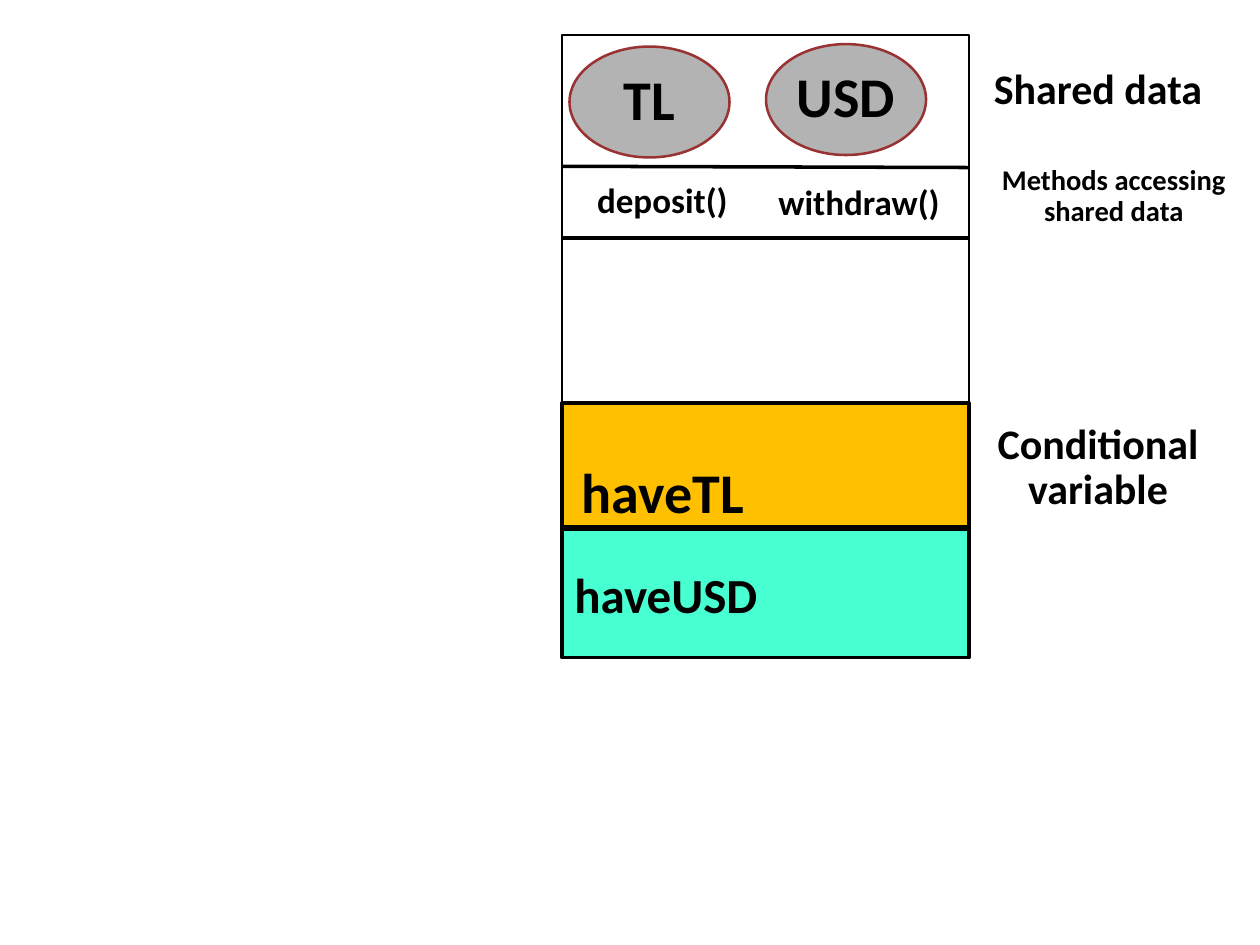
from dataclasses import dataclass

from lxml import etree
from pptx import Presentation
from pptx.dml.color import RGBColor
from pptx.enum.shapes import MSO_CONNECTOR, MSO_SHAPE
from pptx.enum.text import MSO_ANCHOR, MSO_AUTO_SIZE, PP_ALIGN
from pptx.oxml.ns import qn
from pptx.util import Inches, Pt

RECTANGLE, ROUNDED, OVAL = MSO_SHAPE.RECTANGLE, MSO_SHAPE.ROUNDED_RECTANGLE, MSO_SHAPE.OVAL
STRAIGHT = MSO_CONNECTOR.STRAIGHT
TOP, MIDDLE = MSO_ANCHOR.TOP, MSO_ANCHOR.MIDDLE
LEFT, CENTER = PP_ALIGN.LEFT, PP_ALIGN.CENTER
NO_FIT = MSO_AUTO_SIZE.NONE
WIDTH, HEIGHT = Inches(10), Inches(7.5)
BOX_LEFT, BOX_WIDTH, BAND_HEIGHT = 44.6, 32.3, 13.6


@dataclass(frozen=True)
class Theme:
    """Colours, type sizes and line widths of the monitor diagram."""
    font: str = "Calibri"
    ink: str = "000000"
    data_fill: str = "B3B3B3"
    data_line: str = "993333"
    lira_band: str = "FFC000"
    dollar_band: str = "47FFD1"
    huge: float = 32
    large: float = 28
    label: float = 24
    method: float = 20
    note: float = 16.3
    thin: float = 1.45
    thick: float = 2


THEME = Theme()


def across(share):
    """Turn a percentage of the slide width into a length."""
    return round(WIDTH * share / 100)


def down(share):
    """Turn a percentage of the slide height into a length."""
    return round(HEIGHT * share / 100)


def area(left, top, width, height):
    """Turn four percentages into a position and size."""
    return across(left), down(top), across(width), down(height)


def apply_format(target, values):
    """Set every attribute named in a dict of format values."""
    for name, value in values.items():
        setattr(target, name, value)


def write(box, lines, size, align=LEFT, spacing=1.0, anchor=TOP, wrap=False, inset=None):
    """Write bold lines of text into a box."""
    frame = box.text_frame
    apply_format(frame, {"word_wrap": wrap, "auto_size": NO_FIT, "vertical_anchor": anchor})
    if inset is not None:
        sides = ("margin_left", "margin_top", "margin_right", "margin_bottom")
        apply_format(frame, dict.fromkeys(sides, Inches(inset)))
    for index, line in enumerate(lines):
        para = frame.add_paragraph() if index else frame.paragraphs[0]
        apply_format(para, {"alignment": align, "line_spacing": spacing})
        span = para.add_run()
        span.text = line
        apply_format(span.font, {"name": THEME.font, "size": Pt(size), "bold": True})
        span.font.color.rgb = RGBColor.from_string(THEME.ink)


def draw_line(line, color, width):
    """Give a line its colour and width."""
    line.color.rgb = RGBColor.from_string(color)
    line.width = Pt(width)


def add_block(page, kind, place, fill=None, line=THEME.ink, width=THEME.thick):
    """Add a flat shape with an optional fill."""
    shape = page.shapes.add_shape(kind, *area(*place))
    shape.shadow.inherit = False
    if fill:
        shape.fill.solid()
        shape.fill.fore_color.rgb = RGBColor.from_string(fill)
    else:
        shape.fill.background()
    draw_line(shape.line, line, width)
    return shape


def add_label(page, place, lines, size, **options):
    """Add a text box."""
    write(page.shapes.add_textbox(*area(*place)), lines, size, **options)


def add_data(page, left, top, name):
    """Add an oval that stands for a shared variable."""
    oval = add_block(page, OVAL, (left, top, 12.7, 11.73),
                     THEME.data_fill, THEME.data_line, THEME.thin)
    write(oval, [name], THEME.huge, align=CENTER, spacing=0.9, anchor=MIDDLE,
          wrap=True, inset=0.01)


def add_divider(page, start, end):
    """Add a line across the monitor box between two heights."""
    line = page.shapes.add_connector(STRAIGHT, across(BOX_LEFT), down(start),
                                     across(BOX_LEFT + BOX_WIDTH), down(end))
    draw_line(line.line, THEME.ink, THEME.thick)
    etree.SubElement(line._element.spPr, qn("a:effectLst"))


def add_band(page, top, fill):
    """Add a coloured band for a conditional variable."""
    return add_block(page, RECTANGLE, (BOX_LEFT, top, BOX_WIDTH, BAND_HEIGHT), fill)


def main():
    """Build the monitor slide and save it."""
    deck = Presentation()
    apply_format(deck, {"slide_width": WIDTH, "slide_height": HEIGHT})
    page = deck.slides.add_slide(deck.slide_layouts[6])
    centred = {"align": CENTER, "spacing": 0.9}

    add_band(page, 42.67, THEME.lira_band)
    add_label(page, (45.2, 47.73, 15, 8.53), ["haveTL"], THEME.huge)
    add_label(page, (60.8, 18.4, 14.9, 5.87), ["withdraw()"], THEME.method)
    add_label(page, (46.4, 18.27, 12.5, 5.87), ["deposit()"], THEME.method)
    add_data(page, 45.2, 4.93, "TL")
    add_label(page, (77.8, 16.93, 21.2, 8), ["Methods accessing", "shared data"],
              THEME.note, **centred)

    monitor = add_block(page, ROUNDED, (BOX_LEFT, 3.73, BOX_WIDTH, 52), width=THEME.thin)
    monitor.adjustments[0] = 0
    add_divider(page, 25.2, 25.2)
    add_divider(page, 17.6, 17.73)
    add_label(page, (77.8, 6.53, 18.7, 6.13), ["Shared data"], THEME.label, **centred)
    add_label(page, (78.1, 44.13, 18.1, 11.07), ["Conditional", "variable"],
              THEME.label, **centred)
    add_data(page, 60.8, 4.67, "USD")
    dollars = add_band(page, 56, THEME.dollar_band)
    write(dollars, ["haveUSD"], THEME.large, anchor=MIDDLE, wrap=True)

    deck.save("out.pptx")


if __name__ == "__main__":
    main()
